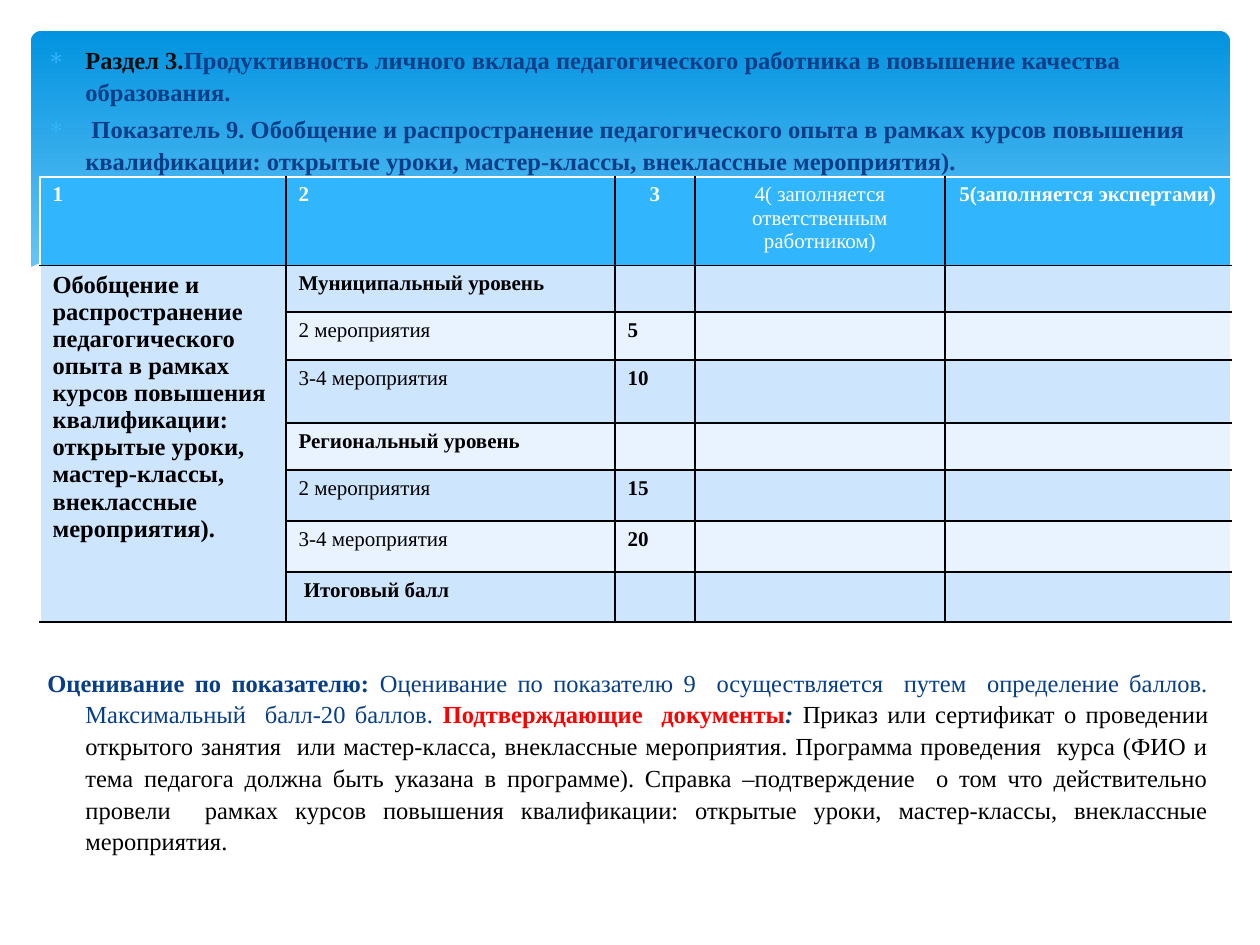
"""Build the slide on indicator 9: a heading, a scoring table and an assessment note."""
import dataclasses
import typing

import lxml.etree
import pptx
import pptx.dml.color
import pptx.enum.shapes
import pptx.enum.text
import pptx.oxml.ns
import pptx.util

SCALE = 914400 / 126
FONT = "Times New Roman"
WHITE, BLACK, NAVY = "FFFFFF", "000000", "073E87"
HEADER, BAND_DARK, BAND_LIGHT = "31B6FD", "CEE5FE", "E8F3FF"
LEFT = pptx.enum.text.PP_ALIGN.LEFT
CENTER = pptx.enum.text.PP_ALIGN.CENTER
JUSTIFY = pptx.enum.text.PP_ALIGN.JUSTIFY

COLUMN_WIDTHS = [246, 329, 80, 250, 286]
HEADINGS = ["1", "2", "3", "4( заполняется ответственным работником)", "5(заполняется экспертами)"]
TOPIC = (
    "Обобщение и распространение педагогического опыта в рамках курсов повышения "
    "квалификации: открытые уроки, мастер-классы, внеклассные мероприятия)."
)
WAVE = [
    (29, 268), (58, 255), (107, 244), (165, 236), (243, 232), (341, 238), (460, 254),
    (563, 277), (699, 308), (816, 330), (917, 343), (1019, 349), (1103, 344),
    (1172, 330), (1231, 310), (1231, 414), (29, 414),
]


@dataclasses.dataclass
class Level:
    """One scoring row: its label, score, height and weight."""

    label: str
    score: str
    height: int
    bold: bool = False


@dataclasses.dataclass
class Piece:
    """A stretch of text in one format."""

    text: str
    color: str = NAVY
    bold: bool = True
    italic: bool = False


LEVELS = [
    Level("Муниципальный уровень", "", 47, True),
    Level("2 мероприятия", "5", 48),
    Level("3-4 мероприятия", "10", 63),
    Level("Региональный уровень", "", 47, True),
    Level("2 мероприятия", "15", 51),
    Level("3-4 мероприятия", "20", 51),
    Level(" Итоговый балл", "", 50, True),
]
HEADING = [
    [
        Piece("Раздел 3.", "0D0D0D"),
        Piece("Продуктивность личного вклада педагогического работника в повышение качества образования."),
    ],
    [Piece(" Показатель 9. " + TOPIC)],
]
ASSESSMENT = [[
    Piece("Оценивание по показателю:"),
    Piece(
        " Оценивание по показателю 9  осуществляется  путем  определение баллов. "
        "Максимальный  балл-20 баллов. ", bold=False,
    ),
    Piece("Подтверждающие  документы", "FF0000"),
    Piece(": ", "06436B", italic=True),
    Piece(
        "Приказ или сертификат о проведении открытого занятия  или мастер-класса, внеклассные "
        "мероприятия. Программа проведения  курса (ФИО и тема педагога должна быть указана в "
        "программе). Справка –подтверждение  о том что действительно провели  рамках курсов "
        "повышения квалификации: открытые уроки, мастер-классы, внеклассные мероприятия.",
        BLACK, False,
    ),
]]


def px(length: int) -> int:
    """Turn pixels into EMU."""
    return round(length * SCALE)


def rgb(color: str) -> pptx.dml.color.RGBColor:
    """Turn a hex string into a colour."""
    return pptx.dml.color.RGBColor.from_string(color)


def add_text(para: typing.Any, text: str, *, size: int = 14, color: str = BLACK,
             bold: bool = False, italic: bool = False) -> None:
    """Add a formatted span to a paragraph."""
    span = para.add_run()
    span.text = text
    font = span.font
    font.name, font.size = FONT, pptx.util.Pt(size)
    font.bold, font.italic = bold, italic
    font.color.rgb = rgb(color)


def child(parent: typing.Any, tag: str, **attributes: str) -> typing.Any:
    """Append a DrawingML element to a parent."""
    return lxml.etree.SubElement(parent, pptx.oxml.ns.qn(tag), **attributes)


def add_backdrop(page: typing.Any) -> None:
    """Draw the gradient panel and the white wave that closes it."""
    panel = page.shapes.add_shape(
        pptx.enum.shapes.MSO_SHAPE.ROUNDED_RECTANGLE, px(31), px(31), px(1199), px(340))
    panel.adjustments[0] = 0.03
    panel.fill.gradient()
    panel.fill.gradient_angle = 270
    for stop, color, position in zip(panel.fill.gradient_stops, ("0293E0", "83D3FE"), (0, 0.9)):
        stop.color.rgb = rgb(color)
        stop.position = position
    builder = page.shapes.build_freeform(*WAVE[0], scale=SCALE)
    builder.add_line_segments(WAVE[1:], close=True)
    wave = builder.convert_to_shape()
    wave.fill.solid()
    wave.fill.fore_color.rgb = rgb(WHITE)
    for shape in (panel, wave):
        shape.line.fill.background()
        shape.shadow.inherit = False


def add_paragraphs(page: typing.Any, top: int, height: int, paragraphs: list[list[Piece]],
                   align: typing.Any = LEFT, bullet: bool = False) -> None:
    """Add a box of hanging paragraphs, with bullets if asked."""
    box = page.shapes.add_textbox(px(35), px(top), px(1186), px(height))
    frame = box.text_frame
    frame.word_wrap = True
    for index, pieces in enumerate(paragraphs):
        para = frame.add_paragraph() if index else frame.paragraphs[0]
        para.alignment = align
        para.line_spacing = 1.08
        para.space_before = pptx.util.Pt(2.8 if index else 0)
        properties = para._p.get_or_add_pPr()
        properties.set("marL", str(px(38)))
        properties.set("indent", str(px(-38)))
        if bullet:
            child(child(properties, "a:buClr"), "a:srgbClr", val=HEADER)
            child(properties, "a:buChar", char="∗")
        for piece in pieces:
            add_text(para, piece.text, color=piece.color, bold=piece.bold, italic=piece.italic)


def style_cell(cell: typing.Any, fill: str, borders: dict[str, str]) -> None:
    """Fill a cell and draw its borders."""
    properties = cell._tc.get_or_add_tcPr()
    for side, color in borders.items():
        line = child(properties, f"a:ln{side}", w="12700")
        child(child(line, "a:solidFill"), "a:srgbClr", val=color)
    cell.fill.solid()
    cell.fill.fore_color.rgb = rgb(fill)


def fill_cell(cell: typing.Any, text: str, align: typing.Any = LEFT, **style: typing.Any) -> None:
    """Write a cell's text, or keep an empty cell small."""
    para = cell.text_frame.paragraphs[0]
    para.alignment = align
    if text:
        add_text(para, text, **style)
    else:
        para._p.get_or_add_endParaRPr().set("sz", "1200")


def add_score_table(page: typing.Any) -> None:
    """Add the table of levels and scores."""
    heights = [88] + [level.height for level in LEVELS]
    last_row, last_column = len(LEVELS), len(COLUMN_WIDTHS) - 1
    table = page.shapes.add_table(
        len(heights), len(COLUMN_WIDTHS), px(40), px(177), px(sum(COLUMN_WIDTHS)), px(sum(heights))).table
    table.horz_banding = False
    for column, width in zip(table.columns, COLUMN_WIDTHS):
        column.width = px(width)
    for row, height in enumerate(heights):
        table.rows[row].height = px(height)
        for column in range(last_column + 1):
            banded = BAND_DARK if row % 2 or column == 0 else BAND_LIGHT
            style_cell(table.cell(row, column), banded if row else HEADER, {
                "L": BLACK if column else WHITE,
                "R": WHITE if column == last_column else BLACK,
                "T": BLACK if row else WHITE,
                "B": WHITE if row == last_row and column == 0 else BLACK,
            })
    for column, text in enumerate(HEADINGS):
        fill_cell(table.cell(0, column), text, CENTER if column > 1 else LEFT,
                  size=12, color=WHITE, bold=column != 3)
    for row, level in enumerate(LEVELS, 1):
        fill_cell(table.cell(row, 1), level.label, size=12, bold=level.bold)
        fill_cell(table.cell(row, 2), level.score, size=12, bold=True)
        for column in (3, 4):
            fill_cell(table.cell(row, column), "")
    table.cell(1, 0).merge(table.cell(last_row, 0))
    fill_cell(table.cell(1, 0), TOPIC, bold=True)


def main() -> None:
    """Build and save the deck."""
    deck = pptx.Presentation()
    deck.slide_width, deck.slide_height = px(1260), px(945)
    page = deck.slides.add_slide(deck.slide_layouts[6])
    add_backdrop(page)
    add_paragraphs(page, 37, 136, HEADING, bullet=True)
    add_score_table(page)
    add_paragraphs(page, 659, 190, ASSESSMENT, align=JUSTIFY)
    deck.save("out.pptx")


if __name__ == "__main__":
    main()
